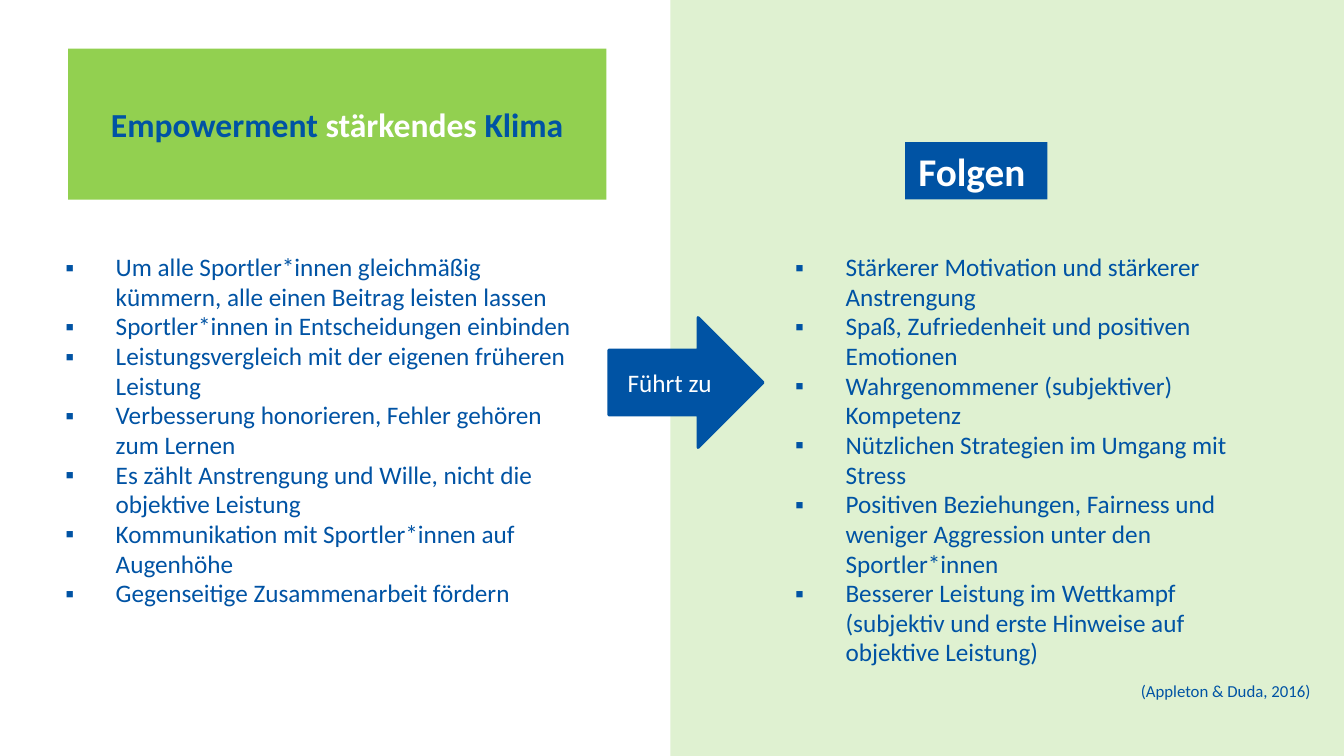
from dataclasses import dataclass

from lxml.etree import SubElement
from pptx import Presentation
from pptx.dml.color import RGBColor
from pptx.enum.shapes import MSO_SHAPE as Kind
from pptx.enum.text import MSO_ANCHOR as Anchor, MSO_AUTO_SIZE as Fit, PP_ALIGN as Align
from pptx.oxml import parse_xml
from pptx.oxml.ns import nsdecls, qn
from pptx.shapes.autoshape import Shape
from pptx.slide import Slide
from pptx.text.text import Font, TextFrame
from pptx.util import Pt

BLUE = RGBColor(0x00, 0x53, 0xA4)
GREEN = RGBColor(0x92, 0xD0, 0x50)
PALE = RGBColor(0xDF, 0xF1, 0xD1)
WHITE = RGBColor(0xFF, 0xFF, 0xFF)
FACE = "Calibri"
INDENT = Pt(36)
LIST_TOP, LIST_HIGH = 177.1, 335.5


@dataclass(frozen=True)
class Area:
    left: float
    top: float
    wide: float
    high: float

    def points(self) -> tuple[Pt, Pt, Pt, Pt]:
        return Pt(self.left), Pt(self.top), Pt(self.wide), Pt(self.high)


@dataclass(frozen=True)
class Block:
    kind: Kind
    area: Area
    fill: RGBColor
    text: str = ""
    size: float = 18
    bold: bool = False
    anchor: Anchor = Anchor.MIDDLE
    line: float = 0


@dataclass(frozen=True)
class Column:
    left: float
    wide: float
    items: tuple[str, ...]


PANEL = Block(Kind.RECTANGLE, Area(478.8, 0, 481.2, 540), PALE)
ARROW = Block(Kind.RIGHT_ARROW, Area(434.9, 226.8, 110.2, 92.9), BLUE, "Führt zu", line=2)
RESULT = Block(Kind.RECTANGLE, Area(646.6, 101.5, 101.5, 41), BLUE, "Folgen ", 28, True, Anchor.TOP)
HEADING = Area(48.6, 34.8, 384.5, 107.8)
SOURCE = Area(807.8, 482.4, 152, 21.6)
PARTS = (("Empowerment ", BLUE), ("stärkendes", WHITE), (" Klima", BLUE))

CLIMATE = Column(39.6, 384.5, (
    "Um alle Sportler*innen gleichmäßig kümmern, alle einen Beitrag leisten lassen",
    "Sportler*innen in Entscheidungen einbinden",
    "Leistungsvergleich mit der eigenen früheren Leistung",
    "Verbesserung honorieren, Fehler gehören zum Lernen",
    "Es zählt Anstrengung und Wille, nicht die objektive Leistung",
    "Kommunikation mit Sportler*innen auf Augenhöhe",
    "Gegenseitige Zusammenarbeit fördern",
))
EFFECTS = Column(560.9, 339.8, (
    "Stärkerer Motivation und stärkerer Anstrengung",
    "Spaß, Zufriedenheit und positiven Emotionen",
    "Wahrgenommener (subjektiver) Kompetenz",
    "Nützlichen Strategien im Umgang mit Stress",
    "Positiven Beziehungen, Fairness und weniger Aggression unter den Sportler*innen",
    "Besserer Leistung im Wettkampf (subjektiv und erste Hinweise auf objektive Leistung)",
))


def style(font: Font, size: float, color: RGBColor, bold: bool = False) -> None:
    font.name, font.size, font.bold = FACE, Pt(size), bold
    font.color.rgb = color


def add_block(slide: Slide, block: Block) -> Shape:
    shape = slide.shapes.add_shape(block.kind, *block.area.points())
    shape.shadow.inherit = False
    shape.fill.solid()
    shape.fill.fore_color.rgb = block.fill
    if block.line:
        shape.line.color.rgb = block.fill
        shape.line.width = Pt(block.line)
    else:
        shape.line.fill.background()
    if block.text:
        frame = shape.text_frame
        frame.text = block.text
        frame.vertical_anchor = block.anchor
        para = frame.paragraphs[0]
        para.alignment = Align.CENTER
        style(para.runs[0].font, block.size, WHITE, block.bold)
    return shape


def add_text(slide: Slide, area: Area, text: str, size: float) -> TextFrame:
    frame = slide.shapes.add_textbox(*area.points()).text_frame
    frame.word_wrap = True
    frame.text = text
    for para in frame.paragraphs:
        for run in para.runs:
            style(run.font, size, BLUE)
    return frame


def add_list(slide: Slide, column: Column) -> None:
    area = Area(column.left, LIST_TOP, column.wide, LIST_HIGH)
    frame = add_text(slide, area, "\n".join(column.items), 18)
    for para in frame.paragraphs:
        para.line_spacing = 0.98
        props = para._p.get_or_add_pPr()
        props.set("marL", str(INDENT))
        props.set("indent", str(-INDENT))
        SubElement(props, qn("a:buFont"), typeface="Arial")
        SubElement(props, qn("a:buChar"), char="▪")


def set_title(slide: Slide) -> None:
    title = slide.shapes.title
    title.left, title.top, title.width, title.height = HEADING.points()
    title.element.spPr.find(qn("a:xfrm")).addnext(parse_xml(
        f'<a:prstGeom {nsdecls("a")} prst="roundRect"><a:avLst>'
        '<a:gd name="adj" fmla="val 16667"/></a:avLst></a:prstGeom>'))
    title.fill.solid()
    title.fill.fore_color.rgb = GREEN
    frame = title.text_frame
    frame.auto_size = Fit.NONE
    frame.word_wrap = True
    frame.vertical_anchor = Anchor.MIDDLE
    para = frame.paragraphs[0]
    para.alignment = Align.CENTER
    for text, color in PARTS:
        run = para.add_run()
        run.text = text
        style(run.font, 24, color, True)


def main() -> None:
    deck = Presentation()
    deck.slide_width, deck.slide_height = Pt(960), Pt(540)
    slide = deck.slides.add_slide(deck.slide_layouts[5])
    set_title(slide)
    add_block(slide, PANEL)
    add_list(slide, CLIMATE)
    add_block(slide, ARROW)
    add_block(slide, RESULT)
    add_list(slide, EFFECTS)
    add_text(slide, SOURCE, "(Appleton & Duda, 2016)", 12)
    deck.save("out.pptx")


if __name__ == "__main__":
    main()
